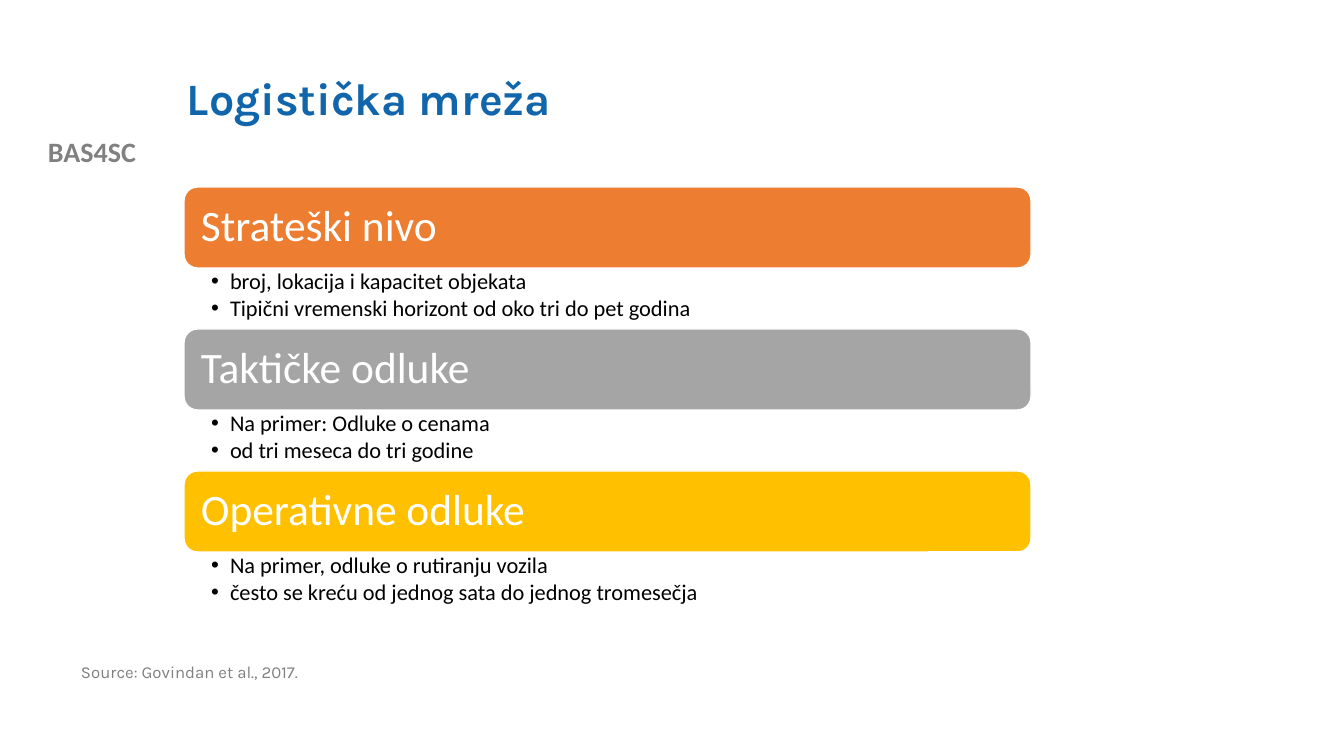
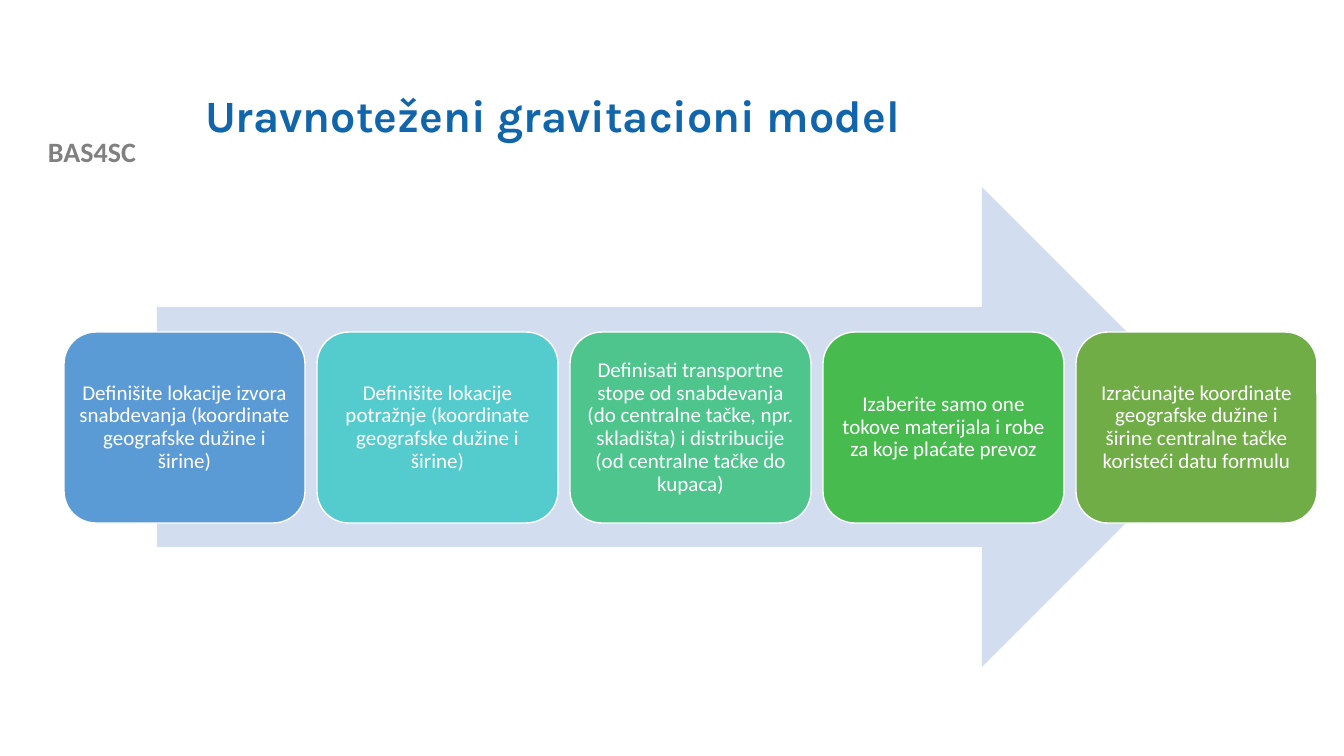
from lxml import etree
from pptx import Presentation
from pptx.dml.color import RGBColor
from pptx.enum.shapes import MSO_SHAPE
from pptx.enum.text import MSO_ANCHOR, MSO_AUTO_SIZE, PP_ALIGN
from pptx.oxml.ns import qn
from pptx.util import Pt

ROUNDED, RIGHT_ARROW = MSO_SHAPE.ROUNDED_RECTANGLE, MSO_SHAPE.RIGHT_ARROW
TOP, MIDDLE = MSO_ANCHOR.TOP, MSO_ANCHOR.MIDDLE
LEFT, CENTER = PP_ALIGN.LEFT, PP_ALIGN.CENTER
NO_AUTOFIT = MSO_AUTO_SIZE.NONE
PX = 914400 / 100.8  # EMU in one px


class Theme:
    heading_font, body_font = "Karla", "Calibri"
    title, muted, text, white = "1065AB", "808080", "000000", "FFFFFF"
    arrow = "D2DEEF"
    levels = ["ED7D31", "A5A5A5", "FFC000"]
    steps = ["5B9BD5", "54CCCD", "4DC58D", "48BB4F", "70AD47"]
    title_size, level_size, label_size = 32, 31, 20
    list_size, step_size, source_size = 16, 15, 12


def place(shape, left, top, width, height):
    shape.left, shape.top = round(left * PX), round(top * PX)
    shape.width, shape.height = round(width * PX), round(height * PX)


def set_text(shape, lines, size, color, font=Theme.body_font, bold=False,
             align=LEFT, anchor=TOP, insets=(10, 5, 10, 5), spacing=0.9):
    frame = shape.text_frame
    frame.text = "\n".join(lines)
    frame.word_wrap, frame.auto_size = True, NO_AUTOFIT
    frame.vertical_anchor = anchor
    (frame.margin_left, frame.margin_top,
     frame.margin_right, frame.margin_bottom) = [round(i * PX) for i in insets]
    for paragraph in frame.paragraphs:
        paragraph.alignment, paragraph.line_spacing = align, spacing
        paragraph.space_before = Pt(0)
        for run in paragraph.runs:
            run.font.name, run.font.size, run.font.bold = font, Pt(size), bold
            run.font.color.rgb = RGBColor.from_string(color)


prs = Presentation()
prs.slide_width, prs.slide_height = round(1344 * PX), round(756 * PX)
network = prs.slides.add_slide(prs.slide_layouts[4])
gravity = prs.slides.add_slide(prs.slide_layouts[5])

# Project label, moved to the master so every slide shows it
label = network.shapes.add_textbox(0, 0, 0, 0)
place(label, 0, 129, 184, 44)
set_text(label, ["BAS4SC"], Theme.label_size, Theme.muted, bold=True,
         align=CENTER, spacing=1.0)
prs.slide_master.shapes._spTree.append(label._element)

# Titles
for slide, heading, left, top in [
    (network, "Logistička mreža", 177, 40),
    (gravity, "Uravnoteženi gravitacioni model", 195, 57),
]:
    place(slide.shapes.title, left, top, 1075, 123)
    set_text(slide.shapes.title, [heading], Theme.title_size, Theme.title,
             font=Theme.heading_font, bold=True, anchor=MIDDLE)

# Slide 1: decision levels, each a bar above a bulleted list
levels = [
    ("Strateški nivo",
     ["broj, lokacija i kapacitet objekata",
      "Tipični vremenski horizont od oko tri do pet godina"]),
    ("Taktičke odluke",
     ["Na primer: Odluke o cenama", "od tri meseca do tri godine"]),
    ("Operativne odluke",
     ["Na primer, odluke o rutiranju vozila",
      "često se kreću od jednog sata do jednog tromesečja"]),
]
title, *details, spare = list(network.placeholders)
BAR_HEIGHT, LIST_HEIGHT = 81, 61
for i, (level, points) in enumerate(levels):
    top = 187 + i * (BAR_HEIGHT + LIST_HEIGHT)
    bar = network.shapes.add_shape(ROUNDED, 0, 0, 0, 0)
    place(bar, 184, top, 847, BAR_HEIGHT)
    bar.shadow.inherit = False
    bar.fill.solid()
    bar.fill.fore_color.rgb = RGBColor.from_string(Theme.levels[i])
    bar.line.color.rgb = RGBColor.from_string(Theme.white)
    bar.line.width = Pt(1)
    set_text(bar, [level], Theme.level_size, Theme.white, anchor=MIDDLE,
             insets=(13, 13, 13, 13))

    place(details[i], 184, top + BAR_HEIGHT, 847, LIST_HEIGHT)
    set_text(details[i], points, Theme.list_size, Theme.text,
             insets=(27, 2, 12, 2))
    for point in details[i].text_frame.paragraphs:
        point.space_after = Pt(2.4)
        properties = point._p.get_or_add_pPr()
        properties.set("marL", str(round(19 * PX)))
        properties.set("indent", str(round(-19 * PX)))
        etree.SubElement(properties, qn("a:buFont")).set("typeface", "Arial")
        etree.SubElement(properties, qn("a:buChar")).set("char", "•")
spare._element.getparent().remove(spare._element)

source = network.shapes.add_textbox(0, 0, 0, 0)
place(source, 71, 657, 675, 30)
set_text(source, ["Source: Govindan et al., 2017."], Theme.source_size,
         Theme.muted, font=Theme.heading_font, spacing=1.0)

# Slide 2: process arrow behind a row of steps
arrow = gravity.shapes.add_shape(RIGHT_ARROW, 0, 0, 0, 0)
place(arrow, 157, 187, 1065, 480)
arrow.shadow.inherit = False
arrow.fill.solid()
arrow.fill.fore_color.rgb = RGBColor.from_string(Theme.arrow)
arrow.line.fill.background()

steps = [
    "Definišite lokacije izvora snabdevanja (koordinate geografske dužine i širine)",
    "Definišite lokacije potražnje (koordinate geografske dužine i širine)",
    "Definisati transportne stope od snabdevanja (do centralne tačke, npr. "
    "skladišta) i distribucije (od centralne tačke do kupaca)",
    "Izaberite samo one tokove materijala i robe za koje plaćate prevoz",
    "Izračunajte koordinate geografske dužine i širine centralne tačke "
    "koristeći datu formulu",
]
STEP_WIDTH, STEP_GAP = 241, 12
for i, step in enumerate(steps):
    card = gravity.shapes.add_shape(ROUNDED, 0, 0, 0, 0)
    place(card, 64 + i * (STEP_WIDTH + STEP_GAP), 332, STEP_WIDTH, 191)
    card.shadow.inherit = False
    card.fill.solid()
    card.fill.fore_color.rgb = RGBColor.from_string(Theme.steps[i])
    card.line.color.rgb = RGBColor.from_string(Theme.white)
    card.line.width = Pt(1)
    set_text(card, [step], Theme.step_size, Theme.white, align=CENTER,
             anchor=MIDDLE, insets=(6, 6, 6, 6))

prs.save("out.pptx")
